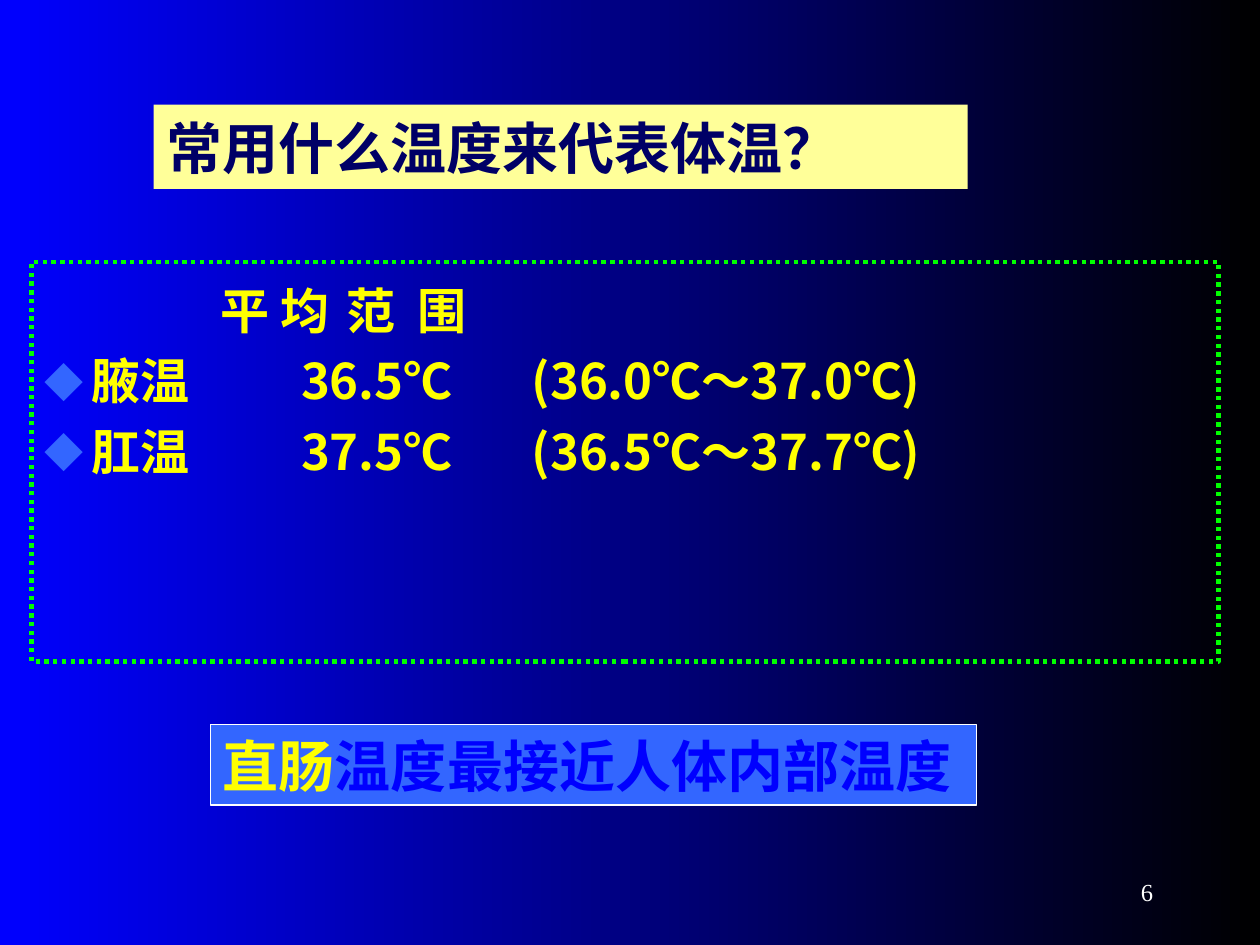
"""Build the slide on the temperatures that stand for body temperature."""
from lxml import etree
from pptx import Presentation
from pptx.dml.color import RGBColor
from pptx.enum import dml, shapes, text
from pptx.oxml import ns
from pptx.util import Inches, Pt

BLUE = RGBColor(0x00, 0x00, 0xFF)
BLACK = RGBColor(0x00, 0x00, 0x00)
NAVY = RGBColor(0x00, 0x00, 0x66)
SKY = RGBColor(0x33, 0x66, 0xFF)
CREAM = RGBColor(0xFF, 0xFF, 0x99)
YELLOW = RGBColor(0xFF, 0xFF, 0x00)
GREEN = RGBColor(0x00, 0xFF, 0x00)
WHITE = RGBColor(0xFF, 0xFF, 0xFF)

CJK_FONT = "Noto Sans CJK SC"
INDENT = Inches(0.38)
HEADER_STOPS = (1.4, 3.24)
VALUE_STOPS = (2.04, 3.87)
READINGS = (
    ("腋温", "36.5℃", "(36.0℃～37.0℃)"),
    ("肛温", "37.5℃", "(36.5℃～37.7℃)"),
)


def add_child(parent, tag, **attributes):
    """Append a DrawingML element to its parent."""
    child = etree.SubElement(parent, ns.qn(tag))
    for name, value in attributes.items():
        child.set(name, str(value))
    return child


def place(shape, left, top, width, height):
    """Move and size a shape, in inches."""
    shape.left, shape.top = Inches(left), Inches(top)
    shape.width, shape.height = Inches(width), Inches(height)


def set_frame(shape, anchor):
    """Set wrapping and anchoring of a shape's text."""
    frame = shape.text_frame
    frame.word_wrap = True
    frame.auto_size = text.MSO_AUTO_SIZE.NONE
    frame.vertical_anchor = anchor
    return frame


def add_run(paragraph, words, size, color, font=CJK_FONT, bold=True):
    """Add one formatted run to a paragraph."""
    run = paragraph.add_run()
    run.text = words
    run.font.size = Pt(size)
    run.font.bold = bold
    run.font.name = font
    run.font.color.rgb = color
    add_child(run.font._element, "a:ea", typeface=CJK_FONT)


def format_row(paragraph, stops, bullet):
    """Give a row its indent, bullet and tab stops."""
    paragraph.alignment = text.PP_ALIGN.LEFT
    paragraph.line_spacing = 1.2
    paragraph.space_before = Pt(0)
    properties = paragraph._p.get_or_add_pPr()
    properties.set("marL", str(INDENT))
    properties.set("indent", str(-INDENT))
    if bullet:
        color = add_child(properties, "a:buClr")
        add_child(color, "a:srgbClr", val=SKY)
        add_child(properties, "a:buSzPct", val=80000)
        add_child(properties, "a:buFont", typeface=CJK_FONT)
        add_child(properties, "a:buChar", char="◆")
    else:
        add_child(properties, "a:buNone")
    tabs = add_child(properties, "a:tabLst")
    for stop in stops:
        add_child(tabs, "a:tab", pos=Inches(stop), algn="l")


def set_background(slide):
    """Fill the background from blue on the left to black on the right."""
    fill = slide.background.fill
    fill.gradient()
    fill.gradient_angle = 0
    for stop, color, position in zip(fill.gradient_stops, (BLUE, BLACK), (0, 1)):
        stop.color.rgb = color
        stop.position = position


def add_title(slide):
    """Fill the title placeholder with the question."""
    title = slide.shapes.title
    place(title, 1.22, 0.83, 6.46, 0.67)
    title.fill.solid()
    title.fill.fore_color.rgb = CREAM
    paragraph = set_frame(title, text.MSO_ANCHOR.MIDDLE).paragraphs[0]
    paragraph.alignment = text.PP_ALIGN.LEFT
    add_run(paragraph, "常用什么温度来代表体温？", 32, NAVY, "Arial")


def add_readings(slide):
    """Fill the body placeholder with the mean and range of each reading."""
    body = slide.placeholders[1]
    place(body, 0.25, 2.08, 9.42, 3.17)
    body.line.color.rgb = GREEN
    body.line.width = Pt(2.5)
    body.line.dash_style = dml.MSO_LINE.ROUND_DOT
    frame = set_frame(body, text.MSO_ANCHOR.TOP)
    header = frame.paragraphs[0]
    format_row(header, HEADER_STOPS, bullet=False)
    properties = header._p.get_or_add_pPr()
    properties.set("marL", str(Inches(HEADER_STOPS[0])))
    properties.set("indent", "0")
    add_run(header, "平 均\t范  围", 28, YELLOW)
    for reading in READINGS:
        paragraph = frame.add_paragraph()
        format_row(paragraph, VALUE_STOPS, bullet=True)
        add_run(paragraph, "\t".join(reading), 28, YELLOW)


def add_conclusion(slide):
    """Add the framed conclusion under the readings."""
    box = slide.shapes.add_shape(shapes.MSO_SHAPE.RECTANGLE, 0, 0, 0, 0)
    place(box, 1.67, 5.75, 6.08, 0.64)
    box.shadow.inherit = False
    box.fill.solid()
    box.fill.fore_color.rgb = SKY
    box.line.color.rgb = WHITE
    box.line.width = Pt(0.75)
    paragraph = set_frame(box, text.MSO_ANCHOR.MIDDLE).paragraphs[0]
    paragraph.alignment = text.PP_ALIGN.JUSTIFY
    add_run(paragraph, "直肠", 32, YELLOW)
    add_run(paragraph, "温度最接近人体内部温度", 32, BLUE)


def add_page_number(slide):
    """Add the page number at the lower right."""
    box = slide.shapes.add_textbox(0, 0, 0, 0)
    place(box, 7.17, 6.83, 2.08, 0.5)
    paragraph = set_frame(box, text.MSO_ANCHOR.MIDDLE).paragraphs[0]
    paragraph.alignment = text.PP_ALIGN.RIGHT
    add_run(paragraph, "6", 14, WHITE, "Times New Roman", bold=False)


def main():
    """Build and save the presentation."""
    presentation = Presentation()
    presentation.slide_width = Inches(10)
    presentation.slide_height = Inches(7.5)
    slide = presentation.slides.add_slide(presentation.slide_layouts[1])
    set_background(slide)
    add_title(slide)
    add_conclusion(slide)
    add_readings(slide)
    add_page_number(slide)
    presentation.save("out.pptx")


if __name__ == "__main__":
    main()
